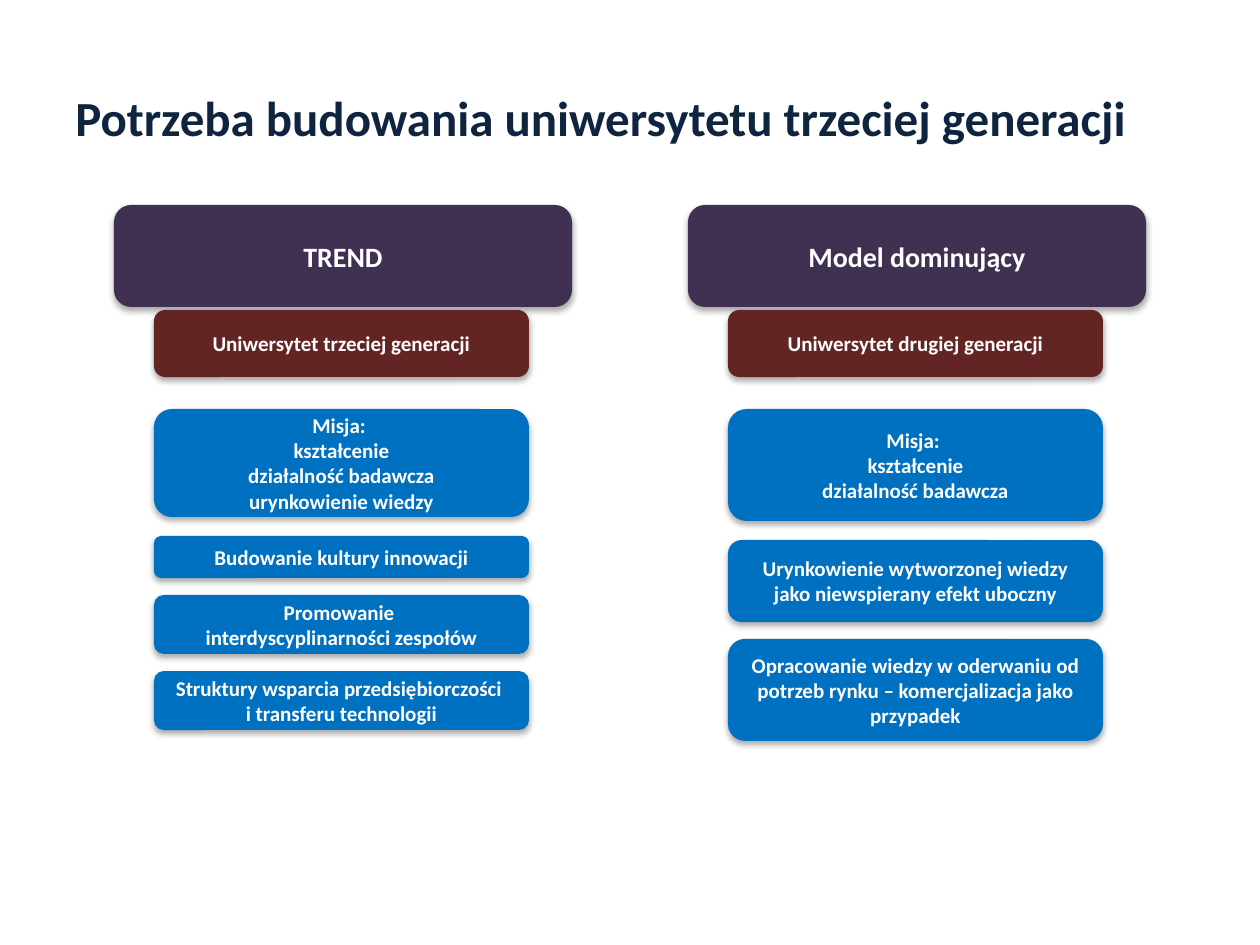
"""Build a slide comparing third-generation and second-generation universities."""
import pptx
import pptx.util
import pptx.dml.color
import pptx.enum.shapes
import pptx.enum.text
import pptx.oxml

PX = 914400 / 126
NAVY = pptx.dml.color.RGBColor(0x0F, 0x24, 0x3E)
PURPLE = pptx.dml.color.RGBColor(0x40, 0x31, 0x52)
MAROON = pptx.dml.color.RGBColor(0x63, 0x25, 0x23)
BLUE = pptx.dml.color.RGBColor(0x00, 0x70, 0xC0)
WHITE = pptx.dml.color.RGBColor(0xFF, 0xFF, 0xFF)

SHADOW = (
    '<a:effectLst xmlns:a="http://schemas.openxmlformats.org/drawingml/2006/main">'
    '<a:outerShdw blurRad="44450" dist="27940" dir="5400000" rotWithShape="0">'
    '<a:srgbClr val="000000"><a:alpha val="32000"/></a:srgbClr>'
    '</a:outerShdw></a:effectLst>'
)


def write_text(shape, text, size, color, align):
    frame = shape.text_frame
    frame.word_wrap = True
    frame.vertical_anchor = pptx.enum.text.MSO_ANCHOR.MIDDLE
    frame.text = text
    for paragraph in frame.paragraphs:
        paragraph.alignment = align
        paragraph.font.name = "Calibri"
        paragraph.font.size = pptx.util.Pt(size)
        paragraph.font.bold = True
        paragraph.font.color.rgb = color


def add_card(slide, left, top, width, height, fill, text, size):
    shape = slide.shapes.add_shape(
        pptx.enum.shapes.MSO_SHAPE.ROUNDED_RECTANGLE,
        *[round(length * PX) for length in (left, top, width, height)])
    shape.fill.solid()
    shape.fill.fore_color.rgb = fill
    shape.line.fill.background()
    shape._element.spPr.append(pptx.oxml.parse_xml(SHADOW))
    write_text(shape, text, size=size, color=WHITE,
               align=pptx.enum.text.PP_ALIGN.CENTER)


presentation = pptx.Presentation()
presentation.slide_width = round(1260 * PX)
presentation.slide_height = round(945 * PX)
slide = presentation.slides.add_slide(presentation.slide_layouts[6])

title = slide.shapes.add_textbox(*[round(length * PX) for length in (63, 38, 1134, 158)])
write_text(title, "Potrzeba budowania uniwersytetu trzeciej generacji",
           size=28, color=NAVY, align=pptx.enum.text.PP_ALIGN.LEFT)

columns = [
    (114, "TREND", "Uniwersytet trzeciej generacji", [
        (409, 108, "Misja: \nkształcenie\ndziałalność badawcza\nurynkowienie wiedzy"),
        (536, 42, "Budowanie kultury innowacji"),
        (595, 59, "Promowanie \vinterdyscyplinarności zespołów"),
        (671, 59, "Struktury wsparcia przedsiębiorczości \vi transferu technologii"),
    ]),
    (688, "Model dominujący", "Uniwersytet drugiej generacji", [
        (409, 112, "Misja: \nkształcenie\ndziałalność badawcza"),
        (540, 82, "Urynkowienie wytworzonej wiedzy jako niewspierany efekt uboczny"),
        (639, 102, "Opracowanie wiedzy w oderwaniu od potrzeb rynku – "
                   "komercjalizacja jako przypadek"),
    ]),
]

for left, heading, university, features in columns:
    add_card(slide, left, 205, 458, 102, PURPLE, heading, size=16)
    add_card(slide, left + 40, 310, 375, 67, MAROON, university, size=12)
    for top, height, text in features:
        add_card(slide, left + 40, top, 375, height, BLUE, text, size=12)

presentation.save("out.pptx")
